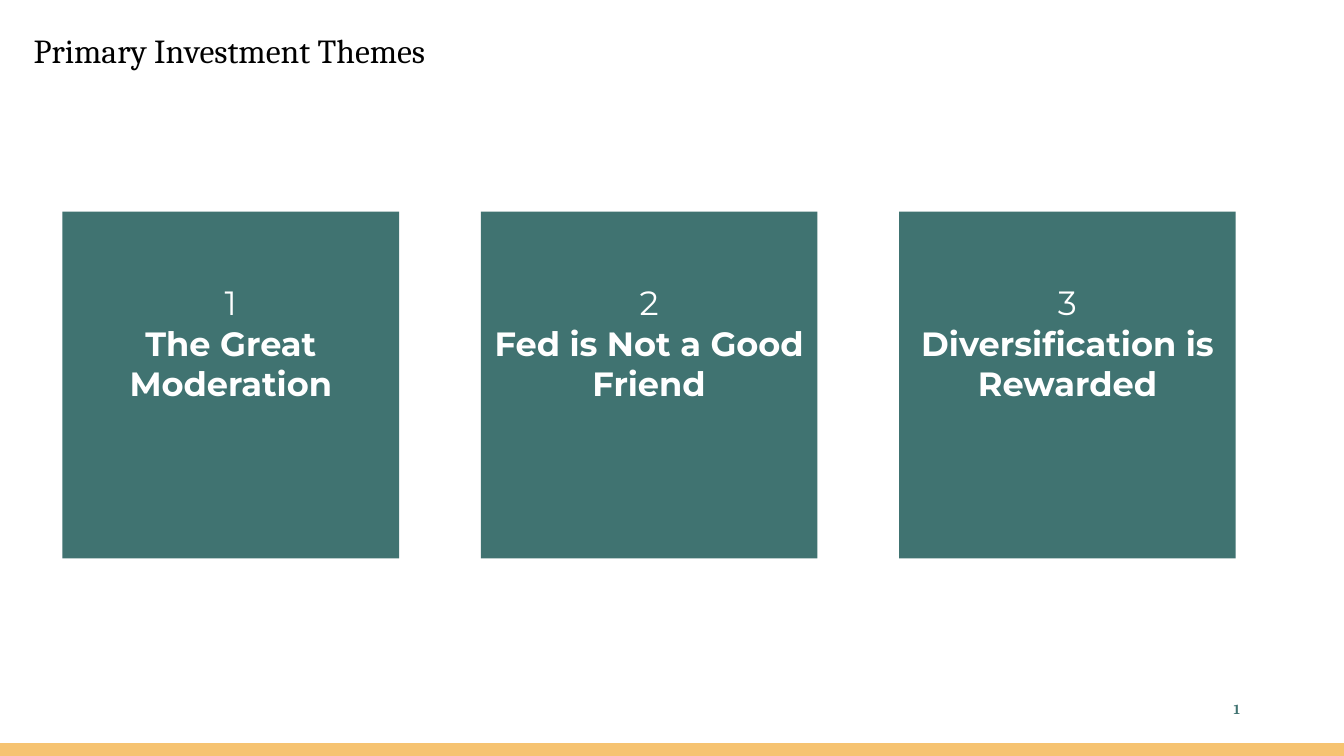
from dataclasses import dataclass

import pptx
import pptx.dml.color
import pptx.enum.shapes
import pptx.enum.text
import pptx.oxml
import pptx.oxml.ns
import pptx.shapes.autoshape
import pptx.slide
import pptx.util

Pt = pptx.util.Pt
Align = pptx.enum.text.PP_ALIGN
Anchor = pptx.enum.text.MSO_ANCHOR


@dataclass(frozen=True)
class Theme:
    teal: str = "407371"
    gold: str = "F6C371"
    white: str = "FFFFFF"
    black: str = "000000"
    serif: str = "Cambria"
    sans: str = "Montserrat"
    large: float = 24
    small: float = 10


@dataclass(frozen=True)
class Box:
    left: float
    top: float
    width: float
    height: float

    def lengths(self) -> tuple:
        return tuple(Pt(value) for value in (self.left, self.top, self.width, self.height))


@dataclass(frozen=True)
class Line:
    text: str
    font: str
    color: str
    size: float
    bold: bool = False
    alignment: Align = Align.LEFT
    spacing: float = 1.0


THEME = Theme()
SLIDE_WIDTH, SLIDE_HEIGHT = 960, 540
FOOTER_BAR_Y = 535.68
FOOTER_BAR_WEIGHT = 10
TITLE_BOX = Box(24, 12.24, 912, 50.4)
NUMBER_BOX = Box(556.56, 496.8, 336.24, 19.44)
FIRST_CARD = Box(44.64, 151.2, 240.48, 247.68)
CARD_STEP = 298.8
THEMES = ("The Great Moderation", "Fed is Not a Good Friend", "Diversification is Rewarded")


def set_attributes(target: object, values: dict) -> None:
    for name, value in values.items():
        setattr(target, name, value)


def rgb(color: str) -> pptx.dml.color.RGBColor:
    return pptx.dml.color.RGBColor.from_string(color)


def write_lines(
    shape: pptx.shapes.autoshape.Shape,
    lines: list[Line],
    margins: tuple[float, float, float, float],
    anchor: Anchor = Anchor.TOP,
) -> None:
    frame = shape.text_frame
    left, top, right, bottom = map(Pt, margins)
    set_attributes(frame, {
        "word_wrap": True,
        "vertical_anchor": anchor,
        "margin_left": left,
        "margin_top": top,
        "margin_right": right,
        "margin_bottom": bottom,
    })
    for index, line in enumerate(lines):
        paragraph = frame.add_paragraph() if index else frame.paragraphs[0]
        set_attributes(paragraph, {"alignment": line.alignment, "line_spacing": line.spacing})
        run = paragraph.add_run()
        run.text = line.text
        set_attributes(run.font, {"name": line.font, "size": Pt(line.size), "bold": line.bold})
        run.font.color.rgb = rgb(line.color)


def add_footer_bar(slide: pptx.slide.Slide) -> None:
    connector = slide.shapes.add_connector(
        pptx.enum.shapes.MSO_CONNECTOR.STRAIGHT,
        Pt(0), Pt(FOOTER_BAR_Y), Pt(SLIDE_WIDTH), Pt(FOOTER_BAR_Y),
    )
    connector.line.color.rgb = rgb(THEME.gold)
    connector.line.width = Pt(FOOTER_BAR_WEIGHT)
    properties = connector.element.find(pptx.oxml.ns.qn("p:spPr"))
    properties.append(pptx.oxml.parse_xml(f'<a:effectLst {pptx.oxml.ns.nsdecls("a")}/>'))


def add_card(slide: pptx.slide.Slide, index: int, name: str) -> None:
    box = Box(FIRST_CARD.left + index * CARD_STEP, FIRST_CARD.top, FIRST_CARD.width, FIRST_CARD.height)
    shape = slide.shapes.add_shape(pptx.enum.shapes.MSO_SHAPE.RECTANGLE, *box.lengths())
    shape.shadow.inherit = False
    shape.fill.solid()
    shape.fill.fore_color.rgb = rgb(THEME.teal)
    shape.line.fill.background()
    lines = [
        Line(text, THEME.sans, THEME.white, THEME.large, bold, Align.CENTER)
        for text, bold in ((str(index + 1), False), (name, True))
    ]
    write_lines(shape, lines, (4.32, 50.4, 4.32, 4.32))


def main() -> None:
    presentation = pptx.Presentation()
    set_attributes(presentation, {"slide_width": Pt(SLIDE_WIDTH), "slide_height": Pt(SLIDE_HEIGHT)})
    slide = presentation.slides.add_slide(presentation.slide_layouts[6])
    add_footer_bar(slide)
    title = Line("Primary Investment Themes", THEME.serif, THEME.black, THEME.large, spacing=0.9)
    write_lines(
        slide.shapes.add_textbox(*TITLE_BOX.lengths()), [title], (0, 3.6, 7.2, 3.6), Anchor.MIDDLE
    )
    for index, name in enumerate(THEMES):
        add_card(slide, index, name)
    number = Line("1", THEME.serif, THEME.teal, THEME.small, True, Align.RIGHT)
    write_lines(slide.shapes.add_textbox(*NUMBER_BOX.lengths()), [number], (7.2, 3.6, 7.2, 3.6))
    presentation.save("out.pptx")


if __name__ == "__main__":
    main()
